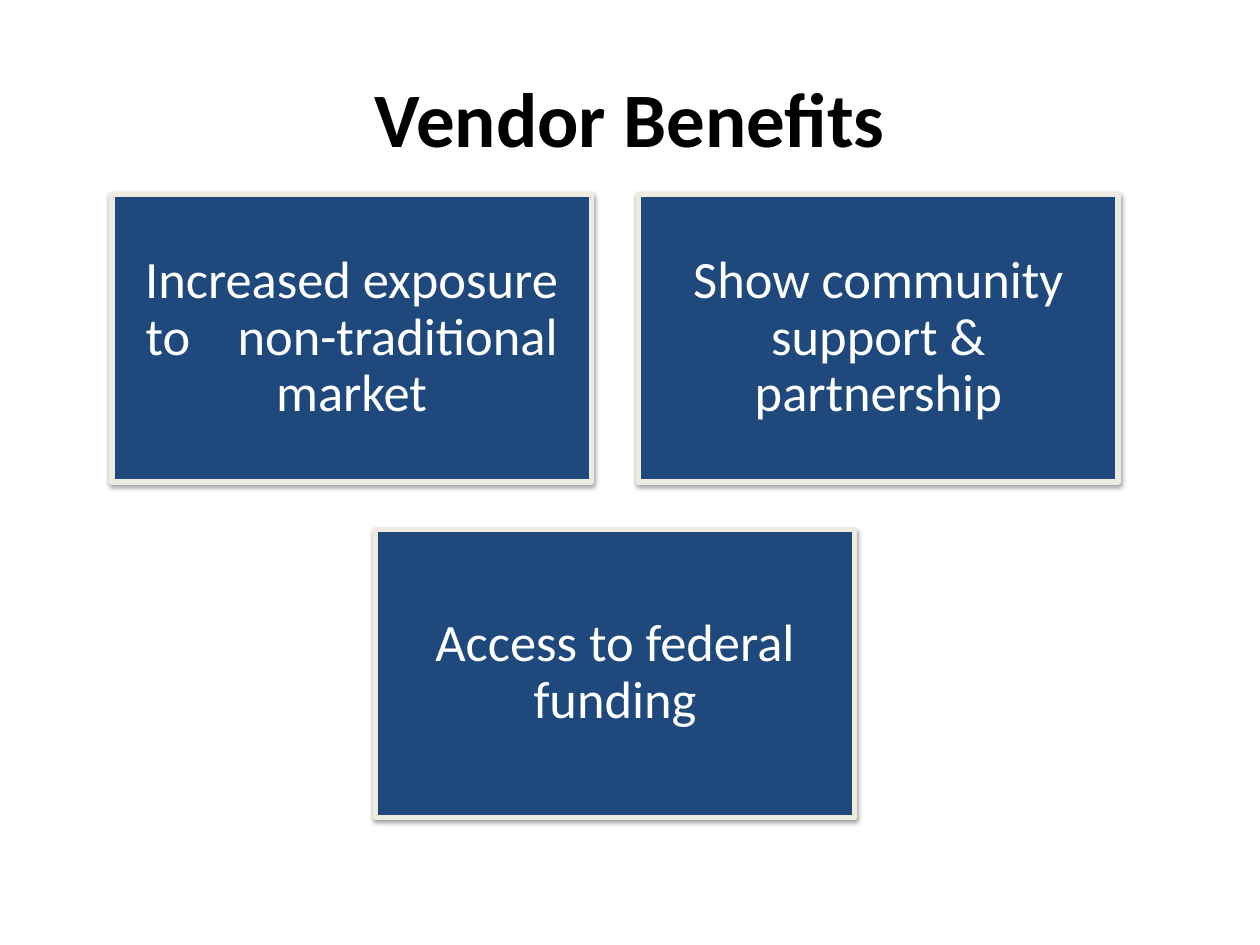
from lxml import etree
from pptx import Presentation
from pptx.dml.color import RGBColor
from pptx.enum.shapes import MSO_SHAPE
from pptx.enum.text import MSO_ANCHOR, PP_ALIGN
from pptx.oxml.ns import qn
from pptx.util import Pt

RECTANGLE = MSO_SHAPE.RECTANGLE
MIDDLE = MSO_ANCHOR.MIDDLE
CENTER = PP_ALIGN.CENTER

TITLE = "Vendor Benefits"
WIDE_GAP = " "
ROWS = [
    [
        [("Increased exposure to", 0), (WIDE_GAP, 20.3), ("non-traditional market", 0)],
        [("Show community support & partnership", 0)],
    ],
    [[("Access to federal funding", 0)]],
]

CARD_WIDTH, CARD_HEIGHT, GAP = 274, 164.5, 27
CENTER_X, TOP = 351.5, 111

TITLE_FONT = {"name": "Calibri", "size": Pt(44), "bold": True}
CARD_FONT = {"name": "Calibri", "size": Pt(30), "bold": False}
FRAME = {"word_wrap": True, "vertical_anchor": MIDDLE}
INSETS = {f"margin_{side}": Pt(8.64) for side in ("left", "right", "top", "bottom")}


def color(value):
    return RGBColor.from_string(value)


def set_all(target, values):
    for name, value in values.items():
        setattr(target, name, value)


def write(frame, spans, font, ink, frame_format):
    set_all(frame, frame_format)
    para = frame.paragraphs[0]
    para.alignment = CENTER
    for text, spacing in spans:
        span = para.add_run()
        span.text = text
        set_all(span.font, font)
        span.font.color.rgb = color(ink)
        if spacing:
            span.font._element.set("spc", str(round(spacing * 100)))
    return para


def add_shadow(shape):
    shape.shadow.inherit = False
    effects = shape._element.spPr.find(qn("a:effectLst"))
    shadow = etree.SubElement(
        effects, qn("a:outerShdw"), blurRad=str(Pt(3.1)), dist=str(Pt(1.6)),
        dir="5400000", rotWithShape="0")
    tint = etree.SubElement(shadow, qn("a:srgbClr"), val="000000")
    etree.SubElement(tint, qn("a:alpha"), val="38000")


def add_card(page, left, top, spans):
    card = page.shapes.add_shape(
        RECTANGLE, Pt(left), Pt(top), Pt(CARD_WIDTH), Pt(CARD_HEIGHT))
    card.fill.solid()
    card.fill.fore_color.rgb = color("1F497D")
    card.line.color.rgb = color("EEECE1")
    card.line.width = Pt(3)
    add_shadow(card)
    para = write(card.text_frame, spans, CARD_FONT, "FFFFFF", {**FRAME, **INSETS})
    para.line_spacing = 0.9


def main():
    deck = Presentation()
    deck.slide_width, deck.slide_height = Pt(720), Pt(540)
    page = deck.slides.add_slide(deck.slide_layouts[6])

    title = page.shapes.add_textbox(Pt(36), Pt(21.6), Pt(648), Pt(90))
    write(title.text_frame, [(TITLE, 0)], TITLE_FONT, "000000", FRAME)

    for row, cards in enumerate(ROWS):
        row_width = len(cards) * (CARD_WIDTH + GAP) - GAP
        for column, spans in enumerate(cards):
            left = CENTER_X - row_width / 2 + column * (CARD_WIDTH + GAP)
            add_card(page, left, TOP + row * (CARD_HEIGHT + GAP), spans)

    deck.save("out.pptx")


if __name__ == "__main__":
    main()
